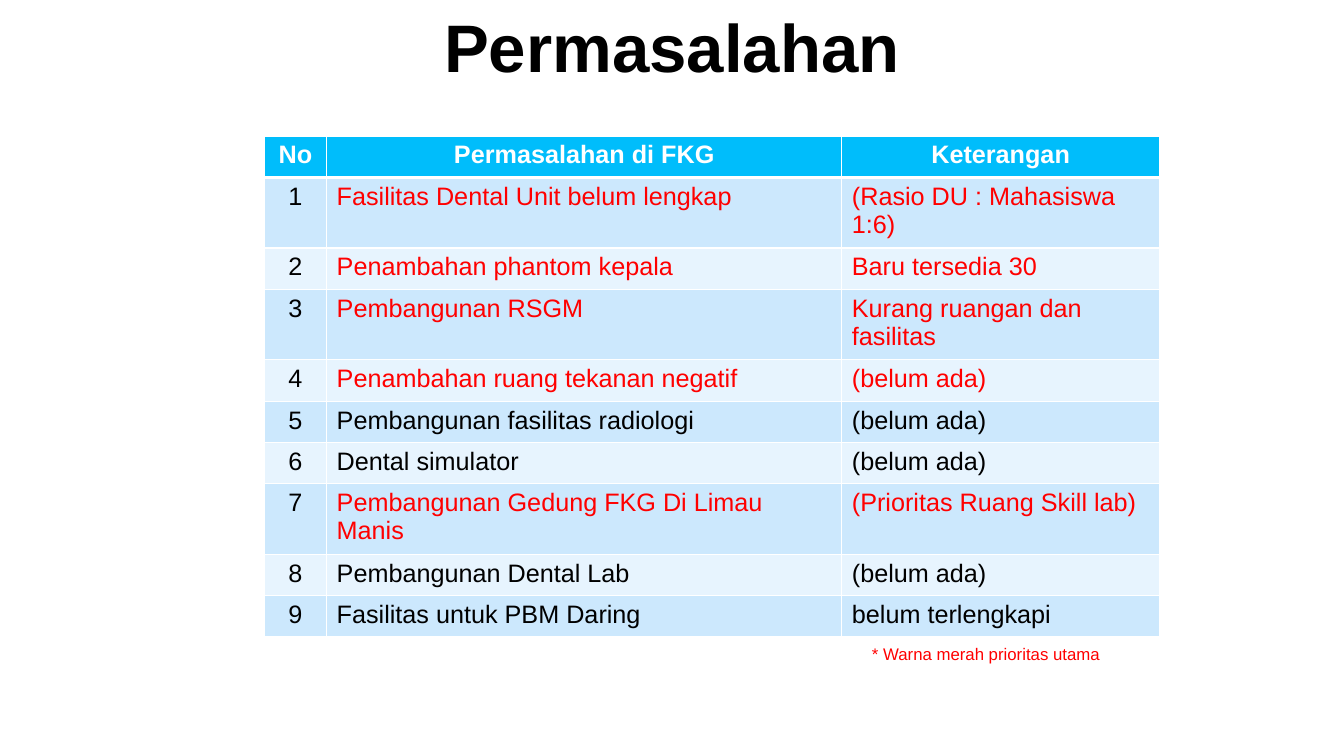
from dataclasses import dataclass

from lxml import etree
from pptx import Presentation
from pptx.dml.color import RGBColor
from pptx.enum.text import MSO_ANCHOR, MSO_AUTO_SIZE, PP_ALIGN
from pptx.oxml.ns import qn
from pptx.util import Pt

CENTER, LEFT = PP_ALIGN.CENTER, PP_ALIGN.LEFT
MIDDLE = MSO_ANCHOR.MIDDLE
GROW = MSO_AUTO_SIZE.SHAPE_TO_FIT_TEXT
PX = 9144  # 100 px to the inch
FONT = "Arial"
HEX = {
    "black": "000000",
    "white": "FFFFFF",
    "red": "FF0000",
    "head": "00BDFB",
    "odd": "CCE8FD",
    "even": "E7F4FE",
}


@dataclass
class Issue:
    name: str
    note: str
    urgent: bool = False


HEADS = ("No", "Permasalahan di FKG", "Keterangan")
COLS = (62, 511, 315)
ROW = 41
ISSUES = [
    Issue("Fasilitas Dental Unit belum lengkap", "(Rasio DU : Mahasiswa 1:6)", True),
    Issue("Penambahan phantom kepala", "Baru tersedia 30", True),
    Issue("Pembangunan RSGM", "Kurang ruangan dan fasilitas", True),
    Issue("Penambahan ruang tekanan negatif", "(belum ada)", True),
    Issue("Pembangunan fasilitas radiologi", "(belum ada)"),
    Issue("Dental simulator", "(belum ada)"),
    Issue("Pembangunan Gedung FKG Di Limau Manis", "(Prioritas Ruang Skill lab)", True),
    Issue("Pembangunan Dental Lab", "(belum ada)"),
    Issue("Fasilitas untuk PBM Daring", "belum terlengkapi"),
]


def color(key: str) -> RGBColor:
    return RGBColor.from_string(HEX[key])


def write(frame, text: str, size: int, ink: str, align=CENTER, bold: bool = False) -> None:
    frame.text = text
    para = frame.paragraphs[0]
    para.alignment = align
    font = para.font
    font.name, font.size, font.bold = FONT, Pt(size), bold
    font.color.rgb = color(ink)


def place(shape, left: int, top: int, width: int, height: int) -> None:
    shape.left, shape.top = left * PX, top * PX
    shape.width, shape.height = width * PX, height * PX
    frame = shape.text_frame
    frame.word_wrap = True
    frame.vertical_anchor = MIDDLE
    frame.auto_size = GROW


def edge(cell, above: int, below: int) -> None:
    props = cell._tc.get_or_add_tcPr()
    for side, width in (("L", 1), ("R", 1), ("T", above), ("B", below)):
        line = etree.SubElement(props, qn(f"a:ln{side}"), w=str(Pt(width)))
        fill = etree.SubElement(line, qn("a:solidFill"))
        etree.SubElement(fill, qn("a:srgbClr"), val=HEX["white"])


def paint(cell, fill: str) -> None:
    cell.fill.solid()
    cell.fill.fore_color.rgb = color(fill)


def draw_table(slide, left: int, top: int) -> None:
    count = len(ISSUES) + 1
    grid = slide.shapes.add_table(
        count, len(COLS), left * PX, top * PX, sum(COLS) * PX, count * ROW * PX
    ).table
    for col, width in zip(grid.columns, COLS):
        col.width = width * PX

    # Header row
    for cell, head in zip(grid.rows[0].cells, HEADS):
        edge(cell, 1, 3)
        paint(cell, "head")
        write(cell.text_frame, head, 18, "white", bold=True)

    # Numbered issues, the urgent ones in red
    for num, issue in enumerate(ISSUES, 1):
        ink = "red" if issue.urgent else "black"
        parts = (
            (str(num), "black", CENTER),
            (issue.name, ink, LEFT),
            (issue.note, ink, LEFT),
        )
        for cell, (text, tone, align) in zip(grid.rows[num].cells, parts):
            edge(cell, 3 if num == 1 else 1, 1)
            paint(cell, "odd" if num % 2 else "even")
            write(cell.text_frame, text, 18, tone, align)


def main() -> None:
    deck = Presentation()
    deck.slide_width, deck.slide_height = 1333 * PX, 750 * PX
    slide = deck.slides.add_slide(deck.slide_layouts[5])

    # Title
    title = slide.shapes.title
    place(title, 0, 0, 1333, 91)
    write(title.text_frame, "Permasalahan", 48, "black", bold=True)

    # Footnote
    note = slide.shapes.add_textbox(0, 0, 0, 0)
    place(note, 800, 634, 356, 30)
    write(note.text_frame, "* Warna merah prioritas utama", 12, "red")

    # Issue table
    draw_table(slide, 262, 135)
    deck.save("out.pptx")


if __name__ == "__main__":
    main()
